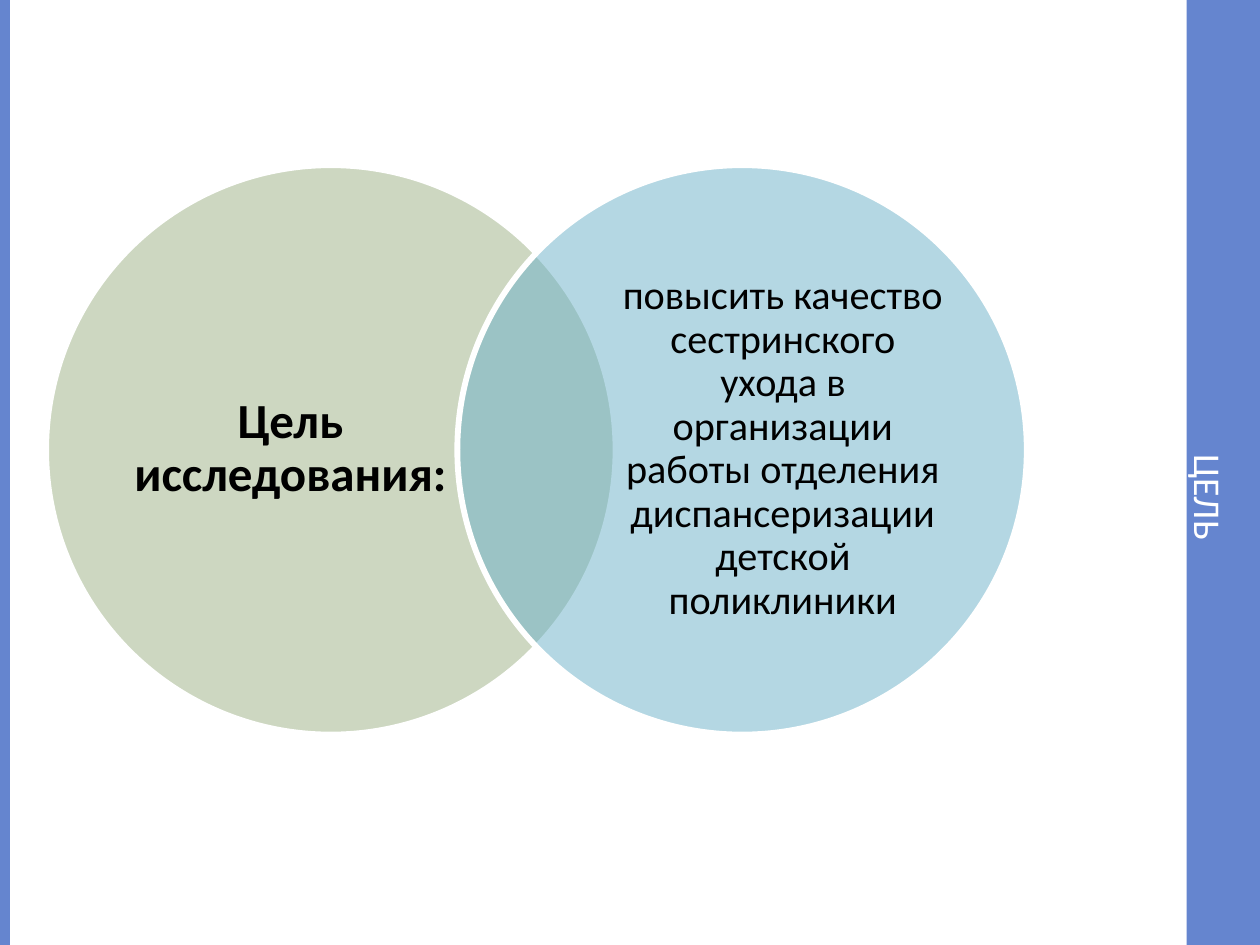
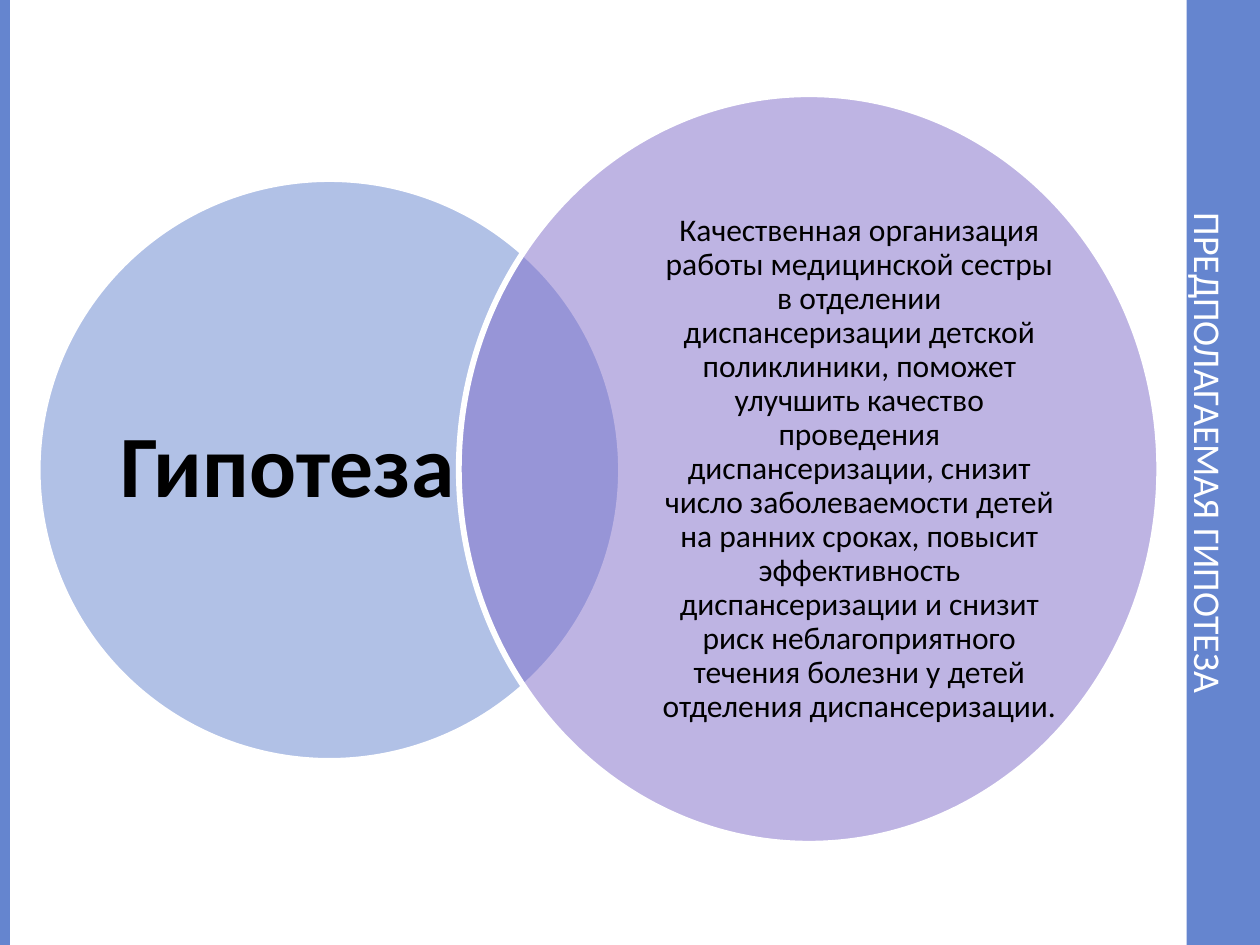
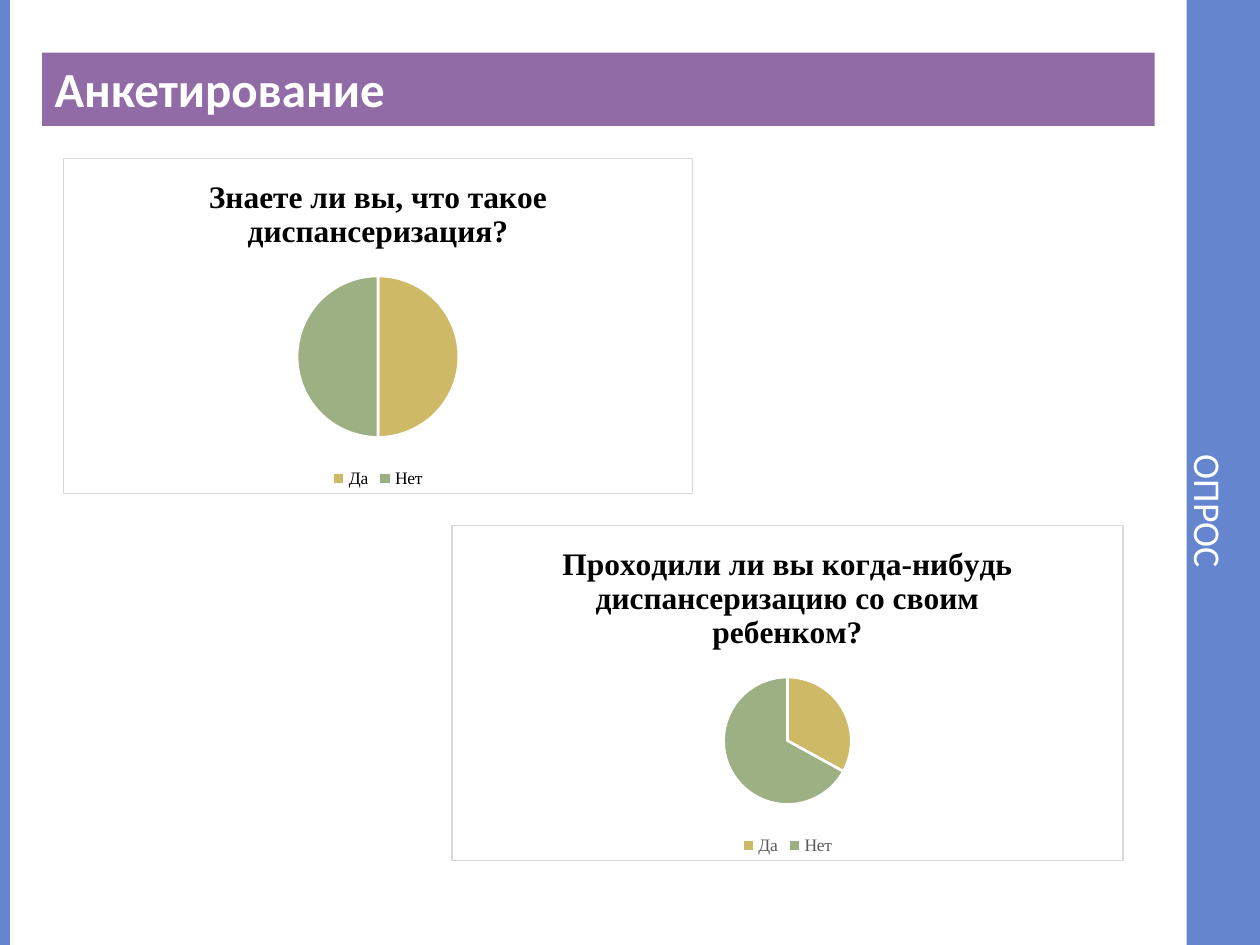
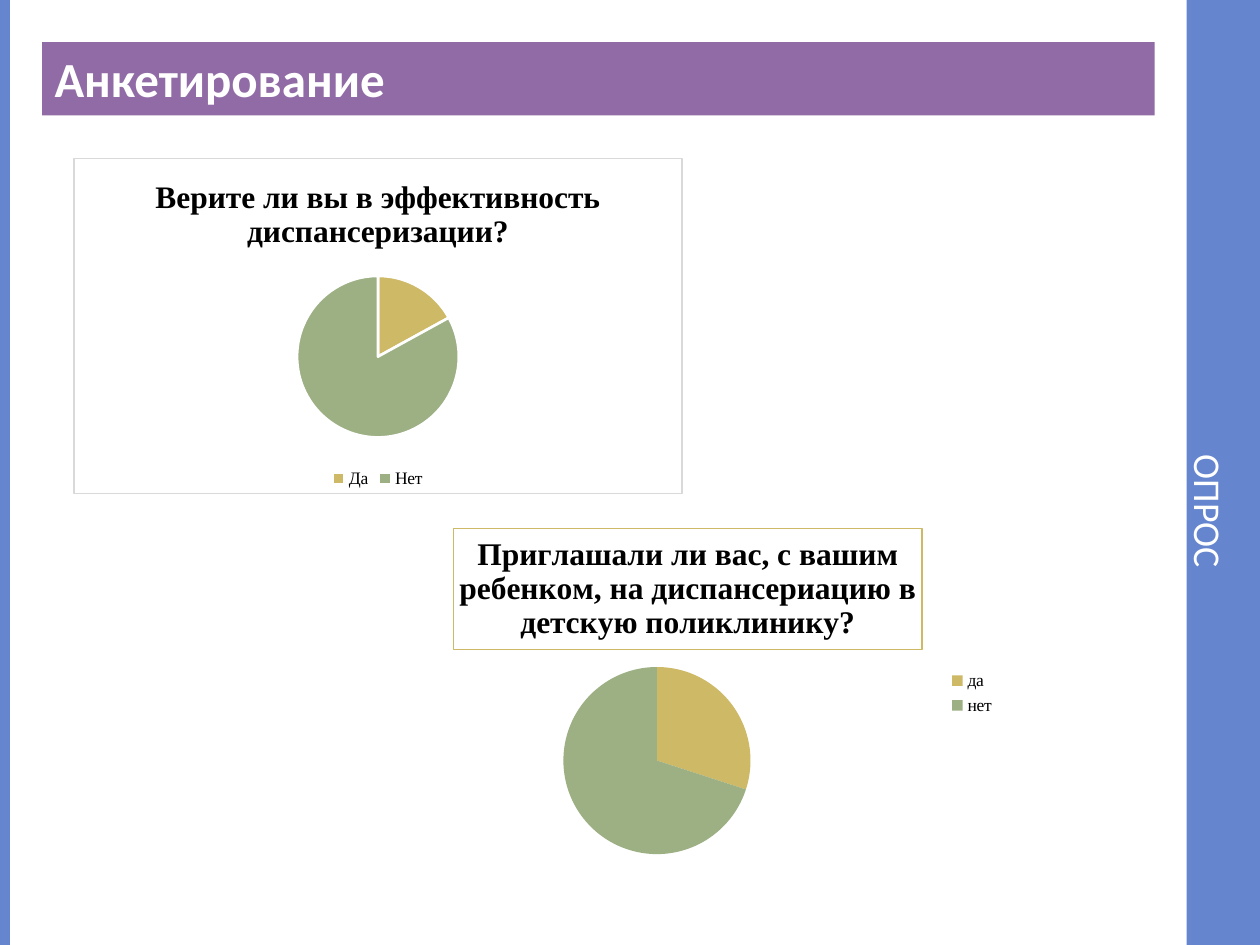
import pptx
import pptx.chart.data
import pptx.dml.color
import pptx.enum.chart
import pptx.enum.shapes
import pptx.enum.text
import pptx.oxml
import pptx.oxml.ns
import pptx.util
import lxml.etree

Cm, Pt = pptx.util.Cm, pptx.util.Pt
SHAPE = pptx.enum.shapes.MSO_SHAPE
ANCHOR = pptx.enum.text.MSO_ANCHOR
ALIGN = pptx.enum.text.PP_ALIGN
LEGEND = pptx.enum.chart.XL_LEGEND_POSITION

WIDE, HIGH = 25.4, 19.05
STRIP = 1.48
COLORS = {
    "white": "FFFFFF", "black": "000000", "grey": "595959", "frame": "D9D9D9",
    "blue": "6585CF", "green": "9CB084", "aqua": "6BB1C9",
    "violet": "7E6BC9", "plum": "906BA5", "gold": "CEB966",
}


def rgb(name):
    return pptx.dml.color.RGBColor.from_string(COLORS[name])


class Deck:
    sans, serif = "Calibri", "Times New Roman"

    def __init__(self):
        self.file = pptx.Presentation()
        self.file.slide_width, self.file.slide_height = Cm(WIDE), Cm(HIGH)
        self.slide = None

    def page(self, title, start):
        """New slide with side strips and a vertical title starting `start` cm down."""
        self.slide = self.file.slides.add_slide(self.file.slide_layouts[6])
        self.block(SHAPE.RECTANGLE, (WIDE - STRIP, 0, STRIP, HIGH), "blue")
        self.block(SHAPE.RECTANGLE, (0, 0, 0.2, HIGH), "blue")
        frame = self.label(title, (WIDE - STRIP, 1.06, STRIP, 16.3), 21.6, "white")
        frame.vertical_anchor = ANCHOR.BOTTOM
        frame._txBody.bodyPr.set("vert", "vert")
        props = frame.paragraphs[0]._p.get_or_add_pPr()
        props.set("marL", str(Cm(start)))
        props.set("indent", "0")

    def font(self, font, size, color, bold=False, face=None):
        font.name, font.size, font.bold = face or self.sans, Pt(size), bold
        font.color.rgb = rgb(color)

    def block(self, kind, box, color):
        shape = self.slide.shapes.add_shape(kind, *map(Cm, box))
        shape.shadow.inherit = False
        shape.fill.solid()
        shape.fill.fore_color.rgb = rgb(color)
        shape.line.fill.background()
        return shape

    def label(self, text, box, size, color="black", bold=False):
        frame = self.slide.shapes.add_textbox(*map(Cm, box)).text_frame
        frame.word_wrap = True
        frame.margin_left = frame.margin_right = 0
        frame.margin_top = frame.margin_bottom = 0
        frame.vertical_anchor = ANCHOR.MIDDLE
        frame.text = text
        self.font(frame.paragraphs[0].runs[0].font, size, color, bold)
        return frame

    def circle(self, box, color, text, area, size, bold=False):
        """Half-transparent circle with its text in a separate area."""
        shape = self.block(SHAPE.OVAL, box, color)
        tint = shape.fill._xPr.find(".//" + pptx.oxml.ns.qn("a:srgbClr"))
        lxml.etree.SubElement(tint, pptx.oxml.ns.qn("a:alpha")).set("val", "50000")
        shape.line.color.rgb = rgb("white")
        shape.line.width = Pt(3.35)
        line = self.label(text, area, size, bold=bold).paragraphs[0]
        line.alignment, line.line_spacing = ALIGN.CENTER, 0.9

    def band(self, text, top):
        shape = self.block(SHAPE.RECTANGLE, (0.85, top, 22.43, STRIP), "plum")
        frame = shape.text_frame
        frame.vertical_anchor = ANCHOR.TOP
        frame.text = text
        frame.paragraphs[0].alignment = ALIGN.LEFT
        self.font(frame.paragraphs[0].runs[0].font, 28, "white", True)

    def pie(self, title, box, names, values, ink="black", framed=True):
        data = pptx.chart.data.CategoryChartData()
        data.categories = names
        data.add_series(title, values)
        kind = pptx.enum.chart.XL_CHART_TYPE.PIE
        chart = self.slide.shapes.add_chart(kind, *map(Cm, box), data).chart
        self.font(chart.font, 10, "black")
        # Title and legend
        chart.has_title = True
        head = chart.chart_title
        head.include_in_layout = False
        head.text_frame.text = title
        self.font(head.text_frame.paragraphs[0].runs[0].font, 18, "black", True, self.serif)
        chart.has_legend = True
        chart.legend.position = LEGEND.BOTTOM if framed else LEGEND.RIGHT
        chart.legend.include_in_layout = False
        self.font(chart.legend.font, 10, ink, face=self.serif)
        # Slices
        plot = chart.plots[0]
        plot.vary_by_categories = True
        for i, color in enumerate(("gold", "green")):
            look = plot.series[0].points[i].format
            look.fill.solid()
            look.fill.fore_color.rgb = rgb(color)
            if framed:
                look.line.color.rgb = rgb("white")
                look.line.width = Pt(1.5)
            else:
                look.line.fill.background()
        # Frame round the chart, or round its title only
        if framed:
            self.frame(chart)
        else:
            head.format.line.color.rgb = rgb("gold")
            head.format.line.width = Pt(0.75)

    def frame(self, chart):
        fill = '<a:solidFill><a:srgbClr val="%s"/></a:solidFill>'
        props = pptx.oxml.parse_xml(
            "<c:spPr %s>%s<a:ln w=\"%d\">%s</a:ln></c:spPr>" % (
                pptx.oxml.ns.nsdecls("c", "a"), fill % COLORS["white"],
                Pt(0.75), fill % COLORS["frame"]))
        chart._chartSpace.find(pptx.oxml.ns.qn("c:chart")).addnext(props)


def main():
    deck = Deck()

    # Aim
    deck.page("ЦЕЛЬ", 8.11)
    deck.circle((0.93, 3.33, 11.48, 11.48), "green", "Цель исследования:",
                (2.54, 4.67, 6.63, 8.76), 28, True)
    deck.circle((9.22, 3.33, 11.48, 11.48), "aqua",
                "повысить качество сестринского ухода в организации работы "
                "отделения диспансеризации детской поликлиники",
                (12.47, 4.67, 6.63, 8.76), 23)

    # Hypothesis
    deck.page("ПРЕДПОЛАГАЕМАЯ ГИПОТЕЗА", 3.23)
    deck.circle((0.76, 3.61, 11.76, 11.73), "blue", "Гипотеза",
                (2.41, 4.98, 6.78, 8.97), 50, True)
    deck.circle((9.25, 1.9, 14.12, 15.11), "violet",
                "Качественная организация работы медицинской сестры в отделении "
                "диспансеризации детской поликлиники, поможет улучшить качество "
                "проведения диспансеризации, снизит число заболеваемости детей на "
                "ранних сроках, повысит эффективность диспансеризации и снизит риск "
                "неблагоприятного течения болезни у детей отделения диспансеризации.",
                (13.26, 3.68, 8.13, 11.56), 18)

    # Survey: awareness and experience
    reply = ("Да", "Нет")
    deck.page("ОПРОС", 8.11)
    deck.band("Анкетирование", 1.06)
    deck.pie("Знаете ли вы, что такое диспансеризация?",
             (1.27, 3.18, 12.7, 6.78), reply, (50, 50))
    deck.pie("Проходили ли вы когда-нибудь диспансеризацию со своим ребенком?",
             (9.1, 10.58, 13.55, 6.78), reply, (33, 67), ink="grey")

    # Survey: trust and invitations
    deck.page("ОПРОС", 8.11)
    deck.band("Анкетирование", 0.85)
    deck.pie("Верите ли вы в эффективность диспансеризации?",
             (1.48, 3.18, 12.28, 6.78), reply, (17, 83))
    deck.pie("Приглашали ли вас, с вашим ребенком, на диспансериацию в детскую поликлинику?",
             (7.41, 10.37, 12.91, 7.2), ("да", "нет"), (30, 70), framed=False)

    deck.file.save("out.pptx")


if __name__ == "__main__":
    main()
